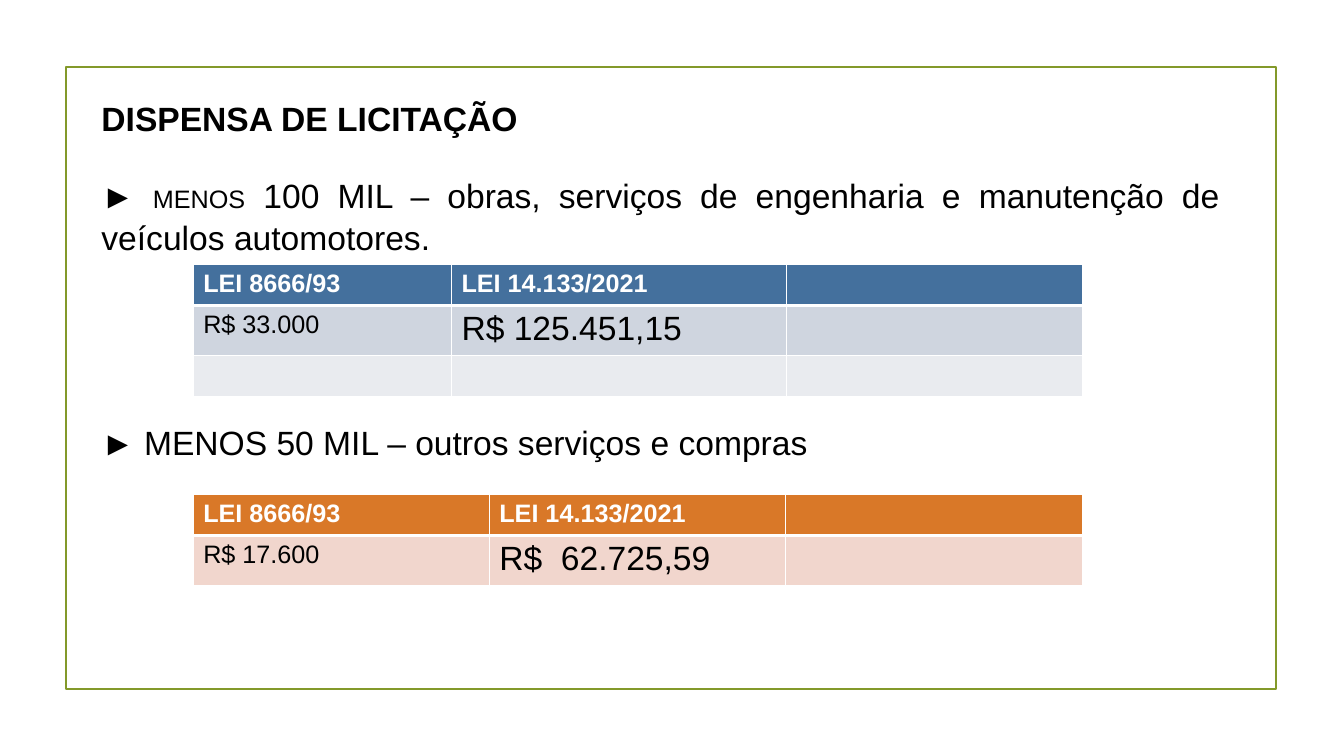
from lxml.etree import SubElement
from pptx import Presentation
from pptx.dml.color import RGBColor
from pptx.enum.shapes import MSO_SHAPE
from pptx.enum.text import MSO_ANCHOR, MSO_AUTO_SIZE, PP_ALIGN
from pptx.oxml import parse_xml
from pptx.oxml.ns import nsdecls, qn
from pptx.util import Pt

PX = 9525
BLACK = RGBColor(0x00, 0x00, 0x00)
WHITE = RGBColor(0xFF, 0xFF, 0xFF)
GREEN = RGBColor(0x83, 0x99, 0x2A)
BLUE = RGBColor(0x44, 0x70, 0x9D)
GREY = RGBColor(0xCF, 0xD5, 0xDF)
PALE = RGBColor(0xE9, 0xEB, 0xEF)
ORANGE = RGBColor(0xD9, 0x78, 0x28)
ROSE = RGBColor(0xF1, 0xD6, 0xCD)

HEAD = {"name": "Arial", "size": Pt(18), "bold": True}
SMALL = {"name": "Arial", "size": Pt(18), "bold": False}
LARGE = {"name": "Arial", "size": Pt(24), "bold": False}
TITLE = {"name": "Arial", "size": Pt(24), "bold": True}


def scale(*sizes):
    return [size * PX for size in sizes]


def apply(item, values):
    for key, value in values.items():
        setattr(item, key, value)


def add_run(para, text, style, color=BLACK):
    run = para.add_run()
    run.text = text
    apply(run.font, style)
    run.font.color.rgb = color


def fill_holder(holder, box, paras, gap=0):
    apply(holder, dict(zip(("left", "top", "width", "height"), scale(*box))))
    frame = holder.text_frame
    apply(frame, {"word_wrap": True, "auto_size": MSO_AUTO_SIZE.NONE,
                  "vertical_anchor": MSO_ANCHOR.TOP})
    for index, runs in enumerate(paras):
        para = frame.add_paragraph() if index else frame.paragraphs[0]
        props = para._p.get_or_add_pPr()
        props.set("marL", "0")
        props.set("indent", "0")
        SubElement(props, qn("a:buNone"))
        apply(para, {"alignment": PP_ALIGN.JUSTIFY, "line_spacing": 1.05,
                     "space_before": Pt(gap if index else 0)})
        for text, style in runs:
            add_run(para, text, style)


def add_frame(slide, box):
    frame = slide.shapes.add_shape(MSO_SHAPE.RECTANGLE, *scale(*box))
    frame.shadow.inherit = False
    frame.fill.background()
    frame.line.color.rgb = GREEN
    frame.line.width = Pt(1.25)


def set_edges(cell, base):
    props = cell._tc.get_or_add_tcPr()
    for index, (side, width) in enumerate(zip("LRTB", (1, 1, 1, base))):
        props.insert(index, parse_xml(
            f'<a:ln{side} {nsdecls("a")} w="{Pt(width)}"><a:solidFill>'
            f'<a:srgbClr val="{WHITE}"/></a:solidFill></a:ln{side}>'))


def add_grid(slide, left, top, widths, heights, fills, rows):
    box = scale(left, top, sum(widths), sum(heights))
    grid = slide.shapes.add_table(len(heights), len(widths), *box).table
    grid.horz_banding = False
    for column, width in zip(grid.columns, widths):
        column.width = width * PX
    for r, (height, fill, texts) in enumerate(zip(heights, fills, rows)):
        grid.rows[r].height = height * PX
        for c, text in enumerate(texts):
            cell = grid.cell(r, c)
            cell.fill.solid()
            cell.fill.fore_color.rgb = fill
            set_edges(cell, 1 if r else 3)
            if text:
                style = (LARGE if c else SMALL) if r else HEAD
                add_run(cell.text_frame.paragraphs[0], text, style,
                        BLACK if r else WHITE)


def main():
    deck = Presentation()
    deck.slide_width, deck.slide_height = scale(1280, 720)
    slide = deck.slides.add_slide(deck.slide_layouts[1])
    add_frame(slide, (63, 64, 1152, 592))
    fill_holder(slide.shapes.title, (87, 87, 1084, 60),
                [[("DISPENSA DE LICITAÇÃO", TITLE)]])
    fill_holder(slide.placeholders[1], (87, 160, 1084, 441), [
        [("► ", LARGE), ("MENOS", SMALL),
         (" 100 MIL – obras, serviços de engenharia e manutenção de "
          "veículos automotores.", LARGE)],
        [("► MENOS 50 MIL – outros serviços e compras", LARGE)],
    ], gap=116)
    head = ("LEI 8666/93", "LEI 14.133/2021", "")
    add_grid(slide, 184, 252, (246, 319, 282), (38, 48, 38),
             (BLUE, GREY, PALE),
             (head, ("R$ 33.000", "R$ 125.451,15", ""), ("", "", "")))
    add_grid(slide, 184, 471, (282, 282, 283), (38, 48), (ORANGE, ROSE),
             (head, ("R$ 17.600", "R$  62.725,59", "")))
    deck.save("out.pptx")


if __name__ == "__main__":
    main()
